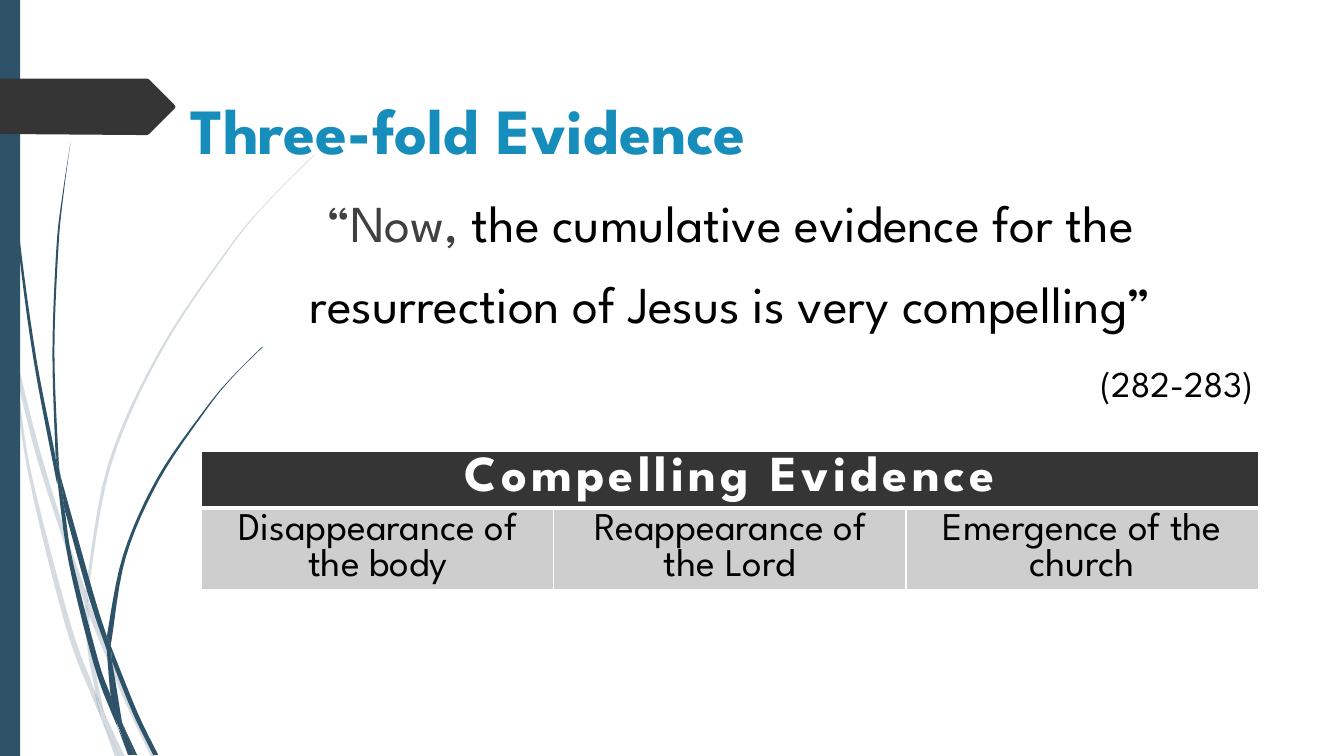
from lxml import etree
from pptx import Presentation
from pptx import util as u
from pptx.dml.color import RGBColor
from pptx.enum import shapes, text
from pptx.oxml.ns import qn

FONT = "League Spartan"
BLUE, CHARCOAL, GREY = "2E5369", "353535", "CECECE"
TITLE = "Three-fold Evidence"
QUOTE = [
    ("“Now, ", "404040"),
    ("the cumulative evidence for the resurrection of Jesus is very compelling”", "000000"),
]
PAGES = "(282-283)"
TABLE_HEADING = "Compelling Evidence"
EVIDENCE = ["Disappearance of the body", "Reappearance of the Lord", "Emergence of the church"]

# Each wisp is a list of edges; each edge is a smooth curve through its points
PALE_WISPS = [
    [[(0, 2.82), (.09, 3.22), (.11, 3.5)], [(.1, 3.44), (0, 2.99)]],
    [[(.14, 3.45), (.36, 4.34), (.62, 5.2), (.85, 5.86)],
     [(.84, 5.99), (.58, 5.22), (.35, 4.49), (.17, 3.76)]],
    [[(.88, 5.96), (1.27, 6.92), (1.55, 7.51)], [(1.5, 7.51), (1.23, 6.94), (.88, 6.1)]],
    [[(1.05, 7.11), (1.24, 7.51)], [(1.19, 7.51), (1.05, 7.11)]],
    [[(.11, 3.5), (.17, 3.76), (.31, 4.69), (.7, 6.19), (.93, 6.83), (1.01, 7.14)],
     [(.92, 6.93), (.65, 6.21), (.28, 4.7), (.11, 3.5)]],
    [[(.84, 5.99), (.88, 6.08), (.91, 6.46), (1.03, 7.06), (1.05, 7.11)],
     [(.96, 6.92), (.87, 6.46), (.84, 5.99)]],
    [[(.88, 5.96), (.88, 5.84), (1.1, 4.62), (1.6, 3.49), (2.29, 2.45), (2.68, 1.98), (3.12, 1.54)],
     [(3.12, 1.53), (2.68, 1.97), (2.28, 2.44), (1.58, 3.48), (1.07, 4.61), (.85, 5.84), (.85, 5.86)]],
    [[(1.01, 7.14), (1.14, 7.51)], [(1.19, 7.51), (1.01, 7.14)]],
    [[(.88, 6.08), (.88, 5.96)], [(.85, 5.86), (.84, 5.99)]],
    [[(.93, 6.83), (1.05, 7.11), (1.19, 7.51)], [(1.19, 7.51), (1.01, 7.14), (.93, 6.83)]],
]
DARK_WISPS = [
    [[(.04, 0), (.08, 1.09), (.19, 2.32), (.36, 3.55), (.55, 4.53), (.57, 4.81)],
     [(.56, 4.77), (.33, 3.55), (.17, 2.33), (.07, 1.1), (.03, 0)]],
    [[(.6, 4.72), (.93, 5.9), (1.06, 6.31)], [(1.06, 6.45), (.88, 5.92), (.64, 5.05)]],
    [[(1.1, 6.41), (1.36, 7.06), (1.57, 7.49)], [(1.52, 7.49), (1.32, 7.08), (1.11, 6.56)]],
    [[(.57, 4.77), (.64, 5.05), (.72, 5.56), (.98, 6.57), (1.1, 6.91), (1.17, 7.22)],
     [(1.11, 7.08), (.93, 6.59), (.68, 5.57), (.57, 4.77)]],
    [[(.7, 1.41), (.63, 1.93), (.58, 2.45), (.54, 3.49), (.58, 4.53), (.6, 4.72)],
     [(.55, 4.49), (.52, 3.49), (.56, 2.45), (.62, 1.93), (.7, 1.41)]],
    [[(1.22, 7.19), (1.36, 7.49)], [(1.33, 7.49), (1.22, 7.19)]],
    [[(.55, 4.49), (.6, 4.72)], [(.64, 5.05), (.57, 4.77)]],
    [[(1.1, 6.41), (1.11, 6.33), (1.25, 5.52), (1.58, 4.76), (2.05, 4.06), (2.31, 3.74), (2.61, 3.44)],
     [(2.6, 3.44), (2.31, 3.73), (2.04, 4.05), (1.56, 4.74), (1.22, 5.51), (1.06, 6.31)]],
    [[(1.17, 7.22), (1.31, 7.49)], [(1.27, 7.49), (1.17, 7.22)]],
    [[(1.06, 6.45), (1.11, 6.56), (1.21, 7.16), (1.22, 7.19)],
     [(1.16, 7.06), (1.1, 6.91), (1.06, 6.45)]],
    [[(1.06, 6.31), (1.1, 6.41)], [(1.11, 6.56), (1.06, 6.45)]],
    [[(1.1, 6.91), (1.22, 7.19), (1.33, 7.49)], [(1.3, 7.49), (1.16, 7.17), (1.1, 6.91)]],
]
ARROW = [[(0, .78), (1.46, .78)], [(1.48, .79), (1.73, 1.04)], [(1.74, 1.06), (1.73, 1.08)],
         [(1.48, 1.33), (1.46, 1.34)], [(1.36, 1.34), (0, 1.33)]]


def color(value):
    return RGBColor.from_string(value)


def smooth(points, steps=6):
    """Return points along a Catmull-Rom curve; two points stay a straight line."""
    if len(points) < 3:
        return points
    padded = [points[0], *points, points[-1]]
    curve = []
    for a, b, c, d in zip(padded, padded[1:], padded[2:], padded[3:]):
        for t in (step / steps for step in range(steps)):
            curve.append(tuple(
                q + t * ((r - p) + t * (2 * p - 5 * q + 4 * r - s + t * (3 * q - p - 3 * r + s))) / 2
                for p, q, r, s in zip(a, b, c, d)))
    return curve + [points[-1]]


def paint(shape, fill, opacity=100):
    shape.shadow.inherit = False
    shape.fill.solid()
    shape.fill.fore_color.rgb = color(fill)
    shape.line.fill.background()
    if opacity < 100:
        fill_color = shape.fill._xPr.find(qn("a:solidFill"))[0]
        etree.SubElement(fill_color, qn("a:alpha"), val=str(opacity * 1000))


def add_outline(container, edges, fill, opacity=100):
    points = [(u.Inches(x), u.Inches(y)) for edge in edges for x, y in smooth(edge)]
    builder = container.build_freeform(*points[0])
    builder.add_line_segments(points[1:], close=True)
    paint(builder.convert_to_shape(), fill, opacity)


def place(placeholder, left, top, width, height):
    placeholder.left, placeholder.top = u.Inches(left), u.Inches(top)
    placeholder.width, placeholder.height = u.Inches(width), u.Inches(height)
    frame = placeholder.text_frame
    frame.word_wrap = True
    frame.auto_size = text.MSO_AUTO_SIZE.NONE
    frame.vertical_anchor = text.MSO_ANCHOR.TOP
    return frame


def style(paragraph, size, align, fill=None, bold=False):
    paragraph.alignment = align
    font = paragraph.font
    font.name, font.size, font.bold = FONT, u.Pt(size), bold
    if fill:
        font.color.rgb = color(fill)


def remove_bullet(paragraph):
    properties = paragraph._p.get_or_add_pPr()
    properties.set("marL", "0")
    properties.set("indent", "0")
    properties.insert_element_before(
        properties.makeelement(qn("a:buNone")), "a:tabLst", "a:defRPr", "a:extLst")


def format_cell(cell, fill, bottom_width):
    cell.vertical_anchor = text.MSO_ANCHOR.MIDDLE
    properties = cell._tc.get_or_add_tcPr()
    for side, width in (("L", 1), ("R", 1), ("T", 1), ("B", bottom_width)):
        line = etree.SubElement(properties, qn(f"a:ln{side}"), w=str(u.Pt(width)))
        solid = etree.SubElement(line, qn("a:solidFill"))
        etree.SubElement(solid, qn("a:srgbClr"), val="FFFFFF")
    cell.fill.solid()
    cell.fill.fore_color.rgb = color(fill)


presentation = Presentation()
presentation.slide_width, presentation.slide_height = u.Inches(13.33), u.Inches(7.5)
slide = presentation.slides.add_slide(presentation.slide_layouts[1])

# Wisps, side bar and arrow
for wisps, opacity in ((PALE_WISPS, 20), (DARK_WISPS, 100)):
    group = slide.shapes.add_group_shape()
    for wisp in wisps:
        add_outline(group.shapes, wisp, BLUE, opacity)
side_bar = slide.shapes.add_shape(
    shapes.MSO_SHAPE.RECTANGLE, 0, 0, u.Inches(.2), presentation.slide_height)
paint(side_bar, BLUE)
add_outline(slide.shapes, ARROW, CHARCOAL)

# Title
title = place(slide.shapes.title, 1.79, .61, 6.37, 1.4).paragraphs[0]
title.text = TITLE
title.line_spacing = 1.3
style(title, 46, text.PP_ALIGN.LEFT, "178DBB", bold=True)

# Quotation
body = place(slide.placeholders[1], 1.96, 1.66, 10.57, 1.81)
quote, pages = body.paragraphs[0], body.add_paragraph()
for words, fill in QUOTE:
    run = quote.add_run()
    run.text = words
    run.font.color.rgb = color(fill)
pages.text = PAGES
style(quote, 37, text.PP_ALIGN.CENTER)
style(pages, 25.9, text.PP_ALIGN.RIGHT, "000000")
for paragraph in (quote, pages):
    paragraph.line_spacing = 1.3
    paragraph.space_before = u.Pt(10)
    remove_bullet(paragraph)

# Evidence table
table = slide.shapes.add_table(
    2, len(EVIDENCE), u.Inches(2), u.Inches(4.48), u.Inches(10.48), u.Inches(.82)).table
table.cell(0, 0).merge(table.cell(0, len(EVIDENCE) - 1))
for column, evidence in enumerate(EVIDENCE):
    format_cell(table.cell(0, column), CHARCOAL, 3)
    cell = table.cell(1, column)
    format_cell(cell, GREY, 1)
    cell.text = evidence
    style(cell.text_frame.paragraphs[0], 28, text.PP_ALIGN.CENTER, "000000")
heading = table.cell(0, 0).text_frame.paragraphs[0]
heading.text = TABLE_HEADING
style(heading, 36, text.PP_ALIGN.CENTER, "FFFFFF", bold=True)
heading.runs[0]._r.get_or_add_rPr().set("spc", "300")

presentation.save("out.pptx")
